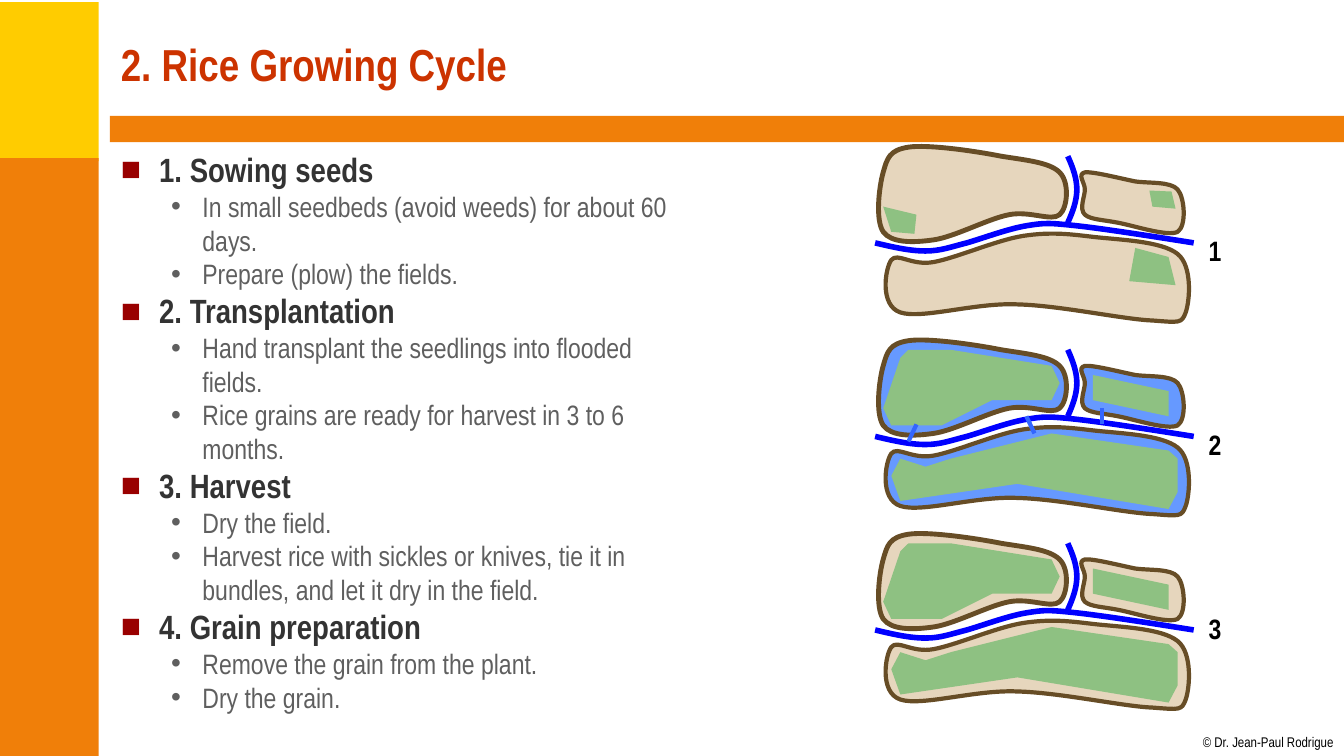
"""Build the rice growing cycle slide: a bulleted list beside three field stages."""
from collections import namedtuple

from lxml import etree
from pptx import Presentation
from pptx.dml.color import RGBColor
from pptx.enum.shapes import MSO_CONNECTOR, MSO_SHAPE
from pptx.enum.text import MSO_ANCHOR
from pptx.oxml.ns import qn
from pptx.util import Inches, Pt

RECTANGLE = MSO_SHAPE.RECTANGLE
STRAIGHT = MSO_CONNECTOR.STRAIGHT
TOP, MIDDLE = MSO_ANCHOR.TOP, MSO_ANCHOR.MIDDLE

Theme = namedtuple("Theme", "font yellow orange title heading detail bullet black soil flood "
                   "bank river canal crop title_size heading_size detail_size credit_size")
theme = Theme(
    font="Arial Narrow", yellow="FFCC00", orange="F07F09", title="CC3300", heading="333333",
    detail="5F5F5F", bullet="990000", black="000000", soil="E6D6BD", flood="6699FF",
    bank="674D26", river="0000FF", canal="3366FF", crop="8EC182",
    title_size=32, heading_size=24, detail_size=20, credit_size=10)


def draw(points, drop, fill=None, line=None, width=0):
    """Draw a filled area or an open line; lined outlines are chains of cubic curves."""
    placed = [(Inches(x), Inches(y + drop)) for x, y in points]
    builder = slide.shapes.build_freeform(*placed[0], scale=1.0)
    builder.add_line_segments(placed[1:], close=fill is not None)
    outline = builder.convert_to_shape()
    outline.shadow.inherit = False
    if fill:
        outline.fill.solid()
        outline.fill.fore_color.rgb = RGBColor.from_string(fill)
    else:
        outline.fill.background()
    if not line:
        outline.line.fill.background()
        return
    outline.line.color.rgb = RGBColor.from_string(line)
    outline.line.width = Pt(width)
    segments = list(outline._element.iter(qn("a:lnTo")))
    for first in range(0, len(segments), 3):
        curve = etree.Element(qn("a:cubicBezTo"))
        segments[first].addprevious(curve)
        for segment in segments[first:first + 3]:
            curve.append(segment[0])
            segment.getparent().remove(segment)


prs = Presentation()
prs.slide_width, prs.slide_height = Inches(13.33), Inches(7.5)
slide = prs.slides.add_slide(prs.slide_layouts[6])

for left, top, width, height, color in [
        (-0.02, 0.02, 1, 1.58, theme.yellow),
        (-0.02, 1.57, 1, 5.93, theme.orange),
        (1.09, 1.15, 12.24, 0.26, theme.orange)]:
    band = slide.shapes.add_shape(RECTANGLE, Inches(left), Inches(top), Inches(width), Inches(height))
    band.shadow.inherit = False
    band.fill.solid()
    band.fill.fore_color.rgb = RGBColor.from_string(color)
    band.line.fill.background()

stages = [
    ("1. Sowing seeds", ["In small seedbeds (avoid weeds) for about 60 days.",
                         "Prepare (plow) the fields."]),
    ("2. Transplantation", ["Hand transplant the seedlings into flooded fields.",
                            "Rice grains are ready for harvest in 3 to 6 months."]),
    ("3. Harvest", ["Dry the field.",
                    "Harvest rice with sickles or knives, tie it in bundles, and let it dry in the field."]),
    ("4. Grain preparation", ["Remove the grain from the plant.", "Dry the grain."]),
]
entries = [(level, text) for heading, details in stages
           for level, text in [(0, heading)] + [(1, detail) for detail in details]]
level_styles = [
    ("■", 0.38, 0.38, theme.bullet, theme.heading, theme.heading_size, True),
    ("•", 0.81, 0.31, theme.detail, theme.detail, theme.detail_size, False),
]
cycle = slide.shapes.add_textbox(Inches(1.1), Inches(1.43), Inches(5.9), Inches(5.79)).text_frame
cycle.word_wrap = True
for index, (level, text) in enumerate(entries):
    symbol, margin, hanging, symbol_color, color, size, bold = level_styles[level]
    entry = cycle.add_paragraph() if index else cycle.paragraphs[0]
    entry.level = level
    properties = entry._p.get_or_add_pPr()
    properties.set("marL", str(Inches(margin)))
    properties.set("indent", str(-Inches(hanging)))
    bullet_color = etree.SubElement(properties, qn("a:buClr"))
    etree.SubElement(bullet_color, qn("a:srgbClr")).set("val", symbol_color)
    etree.SubElement(properties, qn("a:buFont")).set("typeface", "Arial")
    etree.SubElement(properties, qn("a:buChar")).set("char", symbol)
    run = entry.add_run()
    run.text = text
    run.font.name, run.font.size, run.font.bold = theme.font, Pt(size), bold
    run.font.color.rgb = RGBColor.from_string(color)

upper_field = [
    (8.76, 1.71), (8.72, 1.85), (8.68, 2.18), (8.76, 2.3), (8.84, 2.41), (9.05, 2.41), (9.26, 2.38),
    (9.47, 2.35), (9.8, 2.17), (10.01, 2.13), (10.22, 2.09), (10.43, 2.2), (10.51, 2.13),
    (10.59, 2.06), (10.61, 1.81), (10.51, 1.71), (10.41, 1.61), (10.18, 1.59), (9.93, 1.55),
    (9.68, 1.5), (9.2, 1.43), (9.01, 1.46), (8.82, 1.49), (8.8, 1.57), (8.76, 1.71)]
small_field = [
    (10.76, 2.13), (10.7, 2.07), (10.76, 1.95), (10.76, 1.88), (10.76, 1.81), (10.68, 1.73),
    (10.76, 1.71), (10.84, 1.7), (11.11, 1.77), (11.26, 1.8), (11.41, 1.82), (11.61, 1.8),
    (11.68, 1.88), (11.75, 1.96), (11.77, 2.24), (11.68, 2.3), (11.58, 2.35), (11.25, 2.24),
    (11.09, 2.21), (10.94, 2.18), (10.82, 2.18), (10.76, 2.13)]
lower_field = [
    (8.84, 2.58), (8.9, 2.5), (9.04, 2.64), (9.26, 2.6), (9.48, 2.56), (9.89, 2.38), (10.15, 2.34),
    (10.42, 2.3), (10.59, 2.32), (10.84, 2.35), (11.1, 2.38), (11.52, 2.39), (11.68, 2.52),
    (11.83, 2.64), (11.8, 2.99), (11.76, 3.1), (11.72, 3.21), (11.7, 3.2), (11.43, 3.18),
    (11.15, 3.17), (10.51, 3.03), (10.09, 3.02), (9.68, 3), (9.14, 3.17), (8.93, 3.1),
    (8.72, 3.03), (8.78, 2.66), (8.84, 2.58)]
river = [
    (8.68, 2.41), (8.85, 2.45), (9.02, 2.49), (9.18, 2.49), (9.33, 2.49), (9.43, 2.45), (9.59, 2.41),
    (9.76, 2.36), (10, 2.27), (10.18, 2.24), (10.36, 2.21), (10.4, 2.21), (10.68, 2.24),
    (10.95, 2.27), (11.4, 2.34), (11.84, 2.41)]
tributary = [(10.59, 1.55), (10.64, 1.66), (10.68, 1.77), (10.68, 1.88),
             (10.68, 1.99), (10.64, 2.1), (10.59, 2.21)]
seedbeds = [
    [(8.76, 2.05), (8.84, 2.3), (9.07, 2.32), (9.09, 2.13)],
    [(11.26, 2.46), (11.2, 2.79), (11.66, 2.83), (11.59, 2.55)],
    [(11.4, 1.89), (11.43, 2.05), (11.66, 2.07), (11.62, 1.9)],
]
crops = [
    [(8.93, 1.63), (8.76, 2.13), (8.84, 2.3), (9.34, 2.3), (9.84, 2.05), (10.43, 2.05),
     (10.51, 1.88), (10.43, 1.71), (9.43, 1.55), (9.01, 1.55)],
    [(10.84, 1.8), (10.84, 2.05), (11.59, 2.21), (11.59, 1.96)],
    [(8.93, 2.63), (8.84, 2.8), (8.93, 3.05), (10.09, 2.88), (11.59, 3.13), (11.68, 2.96),
     (11.68, 2.63), (11.59, 2.55), (10.43, 2.38), (9.43, 2.63), (9.18, 2.71)],
]
stage_step = 1.92
for stage, (ground, plantings) in enumerate([
        (theme.soil, seedbeds), (theme.flood, crops), (theme.soil, crops)]):
    drop = stage * stage_step
    for field, bank_width in [(upper_field, 3.5), (small_field, 3), (lower_field, 3)]:
        draw(field, drop, ground, theme.bank, bank_width)
    for stream in (river, tributary):
        draw(stream, drop, line=theme.river, width=4)
    for planting in plantings:
        draw(planting, drop, theme.crop)

for canal_ends in [(9.01, 4.38, 9.09, 4.21), (10.18, 4.13, 10.26, 4.3), (10.93, 4.21, 10.93, 4.05)]:
    canal = slide.shapes.add_connector(STRAIGHT, *[Inches(value) for value in canal_ends])
    canal.line.color.rgb = RGBColor.from_string(theme.canal)
    canal.line.width = Pt(3)
    etree.SubElement(canal._element.spPr, qn("a:effectLst"))

captions = [
    ("2. Rice Growing Cycle", 1.1, 0.11, 12, 1.04, theme.title_size, theme.title, True, MIDDLE, True),
    ("© Dr. Jean-Paul Rodrigue", 11.93, 7.28, 1.31, 0.17, theme.credit_size, theme.black, False, TOP, False),
]
captions += [(str(number), 11.89, top, 0.33, 0.44, theme.detail_size, theme.black, True, TOP, True)
             for number, top in enumerate((2.27, 4.19, 6.02), 1)]
for text, left, top, width, height, size, color, bold, anchor, padded in captions:
    caption = slide.shapes.add_textbox(Inches(left), Inches(top), Inches(width), Inches(height)).text_frame
    caption.word_wrap = anchor == MIDDLE
    caption.vertical_anchor = anchor
    if not padded:
        caption.margin_left = caption.margin_right = caption.margin_top = caption.margin_bottom = 0
    run = caption.paragraphs[0].add_run()
    run.text = text
    run.font.name, run.font.size, run.font.bold = theme.font, Pt(size), bold
    run.font.color.rgb = RGBColor.from_string(color)

prs.save("out.pptx")
